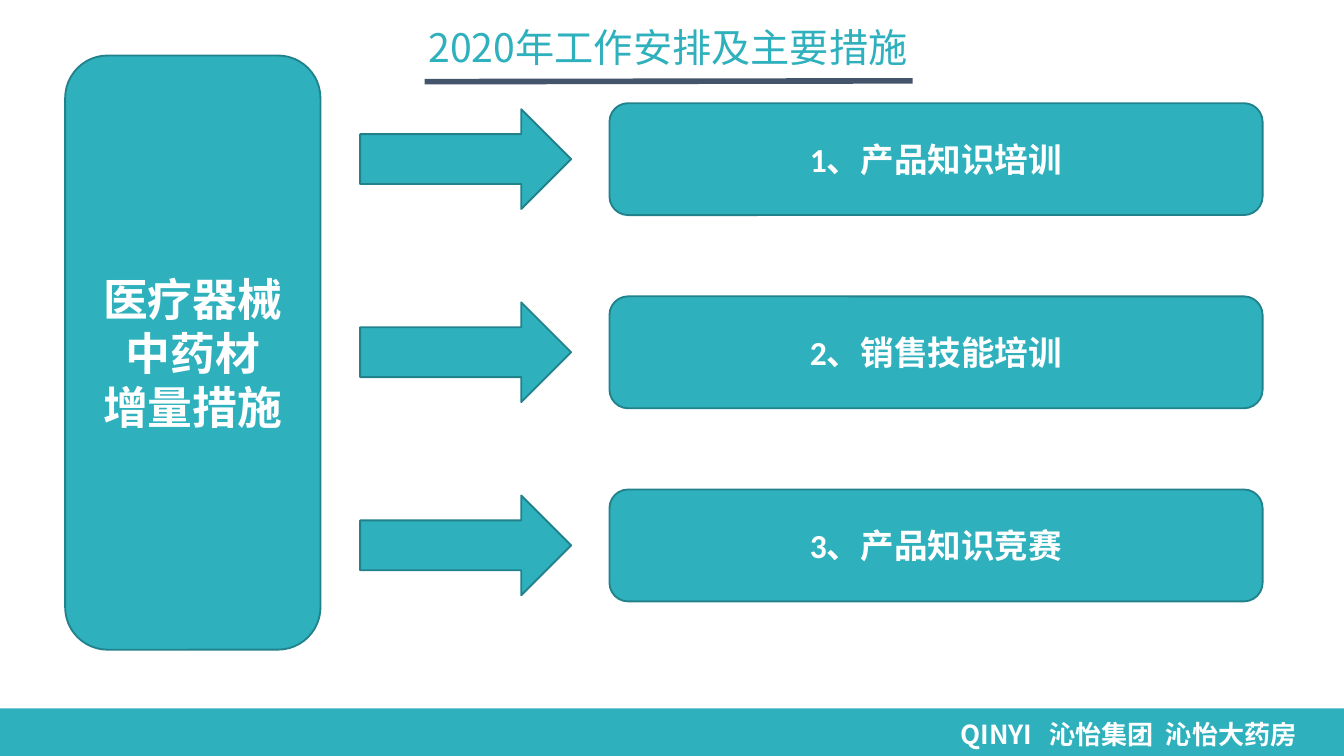
from typing import NamedTuple

from lxml.etree import SubElement
from pptx import Presentation
from pptx.dml.color import RGBColor
from pptx.enum.shapes import MSO_CONNECTOR, MSO_SHAPE
from pptx.enum.text import MSO_ANCHOR, MSO_AUTO_SIZE, PP_ALIGN
from pptx.oxml.ns import qn
from pptx.util import Inches, Pt

COLOURS = {"teal": "2EB0BD", "edge": "22828C", "rule": "44546A", "white": "FFFFFF"}
CJK_FONT = "Noto Sans CJK SC"
LATIN_FONT = "Calibri"


class Area(NamedTuple):
    """A place on the slide, in percent of its width and height."""
    left: float
    top: float
    width: float
    height: float


class Style(NamedTuple):
    size: float
    colour: str = "white"
    font: str = LATIN_FONT
    bold: bool = True


# A 16:9 slide
deck = Presentation()
deck.slide_width = Inches(10)
deck.slide_height = deck.slide_width * 9 // 16
slide = deck.slides.add_slide(deck.slide_layouts[6])


def across(share: float) -> int:
    return round(deck.slide_width * share / 100)


def down(share: float) -> int:
    return round(deck.slide_height * share / 100)


def place(area: Area) -> tuple[int, int, int, int]:
    return across(area.left), down(area.top), across(area.width), down(area.height)


def colour(name: str) -> RGBColor:
    return RGBColor.from_string(COLOURS[name])


def write(frame, lines: list[str], style: Style, align: PP_ALIGN) -> None:
    """Write one paragraph per line, each as a styled run."""
    frame.word_wrap = True
    for index, line in enumerate(lines):
        paragraph = frame.add_paragraph() if index else frame.paragraphs[0]
        paragraph.alignment = align
        run = paragraph.add_run()
        run.text = line
        run.font.size = Pt(style.size)
        run.font.bold = style.bold
        run.font.name = style.font
        run.font.color.rgb = colour(style.colour)
        SubElement(run.font._element, qn("a:ea"), typeface=CJK_FONT)


def add_block(kind: MSO_SHAPE, area: Area, outlined: bool = True):
    block = slide.shapes.add_shape(kind, *place(area))
    block.shadow.inherit = False
    block.fill.solid()
    block.fill.fore_color.rgb = colour("teal")
    if outlined:
        block.line.color.rgb = colour("edge")
        block.line.width = Pt(1)
    else:
        block.line.fill.background()
    return block


def add_panel(area: Area, lines: list[str], size: float) -> None:
    panel = add_block(MSO_SHAPE.FLOWCHART_ALTERNATE_PROCESS, area)
    panel.text_frame.vertical_anchor = MSO_ANCHOR.MIDDLE
    write(panel.text_frame, lines, Style(size), PP_ALIGN.CENTER)


def add_label(area: Area, line: str, style: Style, align: PP_ALIGN,
              margins: tuple[float, float]):
    frame = slide.shapes.add_textbox(*place(area)).text_frame
    frame.margin_left = frame.margin_right = Inches(margins[0])
    frame.margin_top = frame.margin_bottom = Inches(margins[1])
    write(frame, [line], style, align)
    return frame


# Footer band, with tab stops between the names
add_block(MSO_SHAPE.RECTANGLE, Area(0, 93.7, 100, 6.6), outlined=False)
footer = add_label(Area(70.75, 94.35, 30.1, 5.5), "QINYI\t沁怡集团\t沁怡大药房",
                   Style(14, font=CJK_FONT), PP_ALIGN.LEFT, (0.07, 0.04))
footer.auto_size = MSO_AUTO_SIZE.SHAPE_TO_FIT_TEXT
tab_stops = SubElement(footer.paragraphs[0]._p.get_or_add_pPr(), qn("a:tabLst"))
for stop in (0.66, 1.53):
    SubElement(tab_stops, qn("a:tab"), pos=str(Inches(stop)), algn="l")

# Title and the rule beneath it
title = add_label(Area(16.9, 2.1, 65.6, 8.9), "2020年工作安排及主要措施",
                  Style(21, "teal", CJK_FONT, False), PP_ALIGN.CENTER, (0, 0.05))
title.vertical_anchor = MSO_ANCHOR.MIDDLE
title.paragraphs[0].line_spacing = 0.9
rule = slide.shapes.add_connector(MSO_CONNECTOR.STRAIGHT, across(31.6), down(10.8),
                                  across(67.9), down(10.7))
rule.line.color.rgb = colour("rule")
rule.line.width = Pt(3)
SubElement(rule._element.spPr, qn("a:effectLst"))

# Topic panel
add_panel(Area(4.85, 7.35, 19, 78.6), ["医疗器械", "中药材", "增量措施"], 24)

# One row per measure: an arrow leading to a bar
FIRST_ROW, ROW_PITCH = 21.05, 25.55
ARROW_HEIGHT, BAR_HEIGHT = 13.2, 14.8
MEASURES = ["产品知识培训", "销售技能培训", "产品知识竞赛"]
for row, measure in enumerate(MEASURES):
    middle = FIRST_ROW + row * ROW_PITCH
    add_block(MSO_SHAPE.RIGHT_ARROW,
              Area(26.8, middle - ARROW_HEIGHT / 2, 15.7, ARROW_HEIGHT))
    add_panel(Area(45.35, middle - BAR_HEIGHT / 2, 48.6, BAR_HEIGHT),
              [f"{row + 1}、{measure}"], 18)

deck.save("out.pptx")
